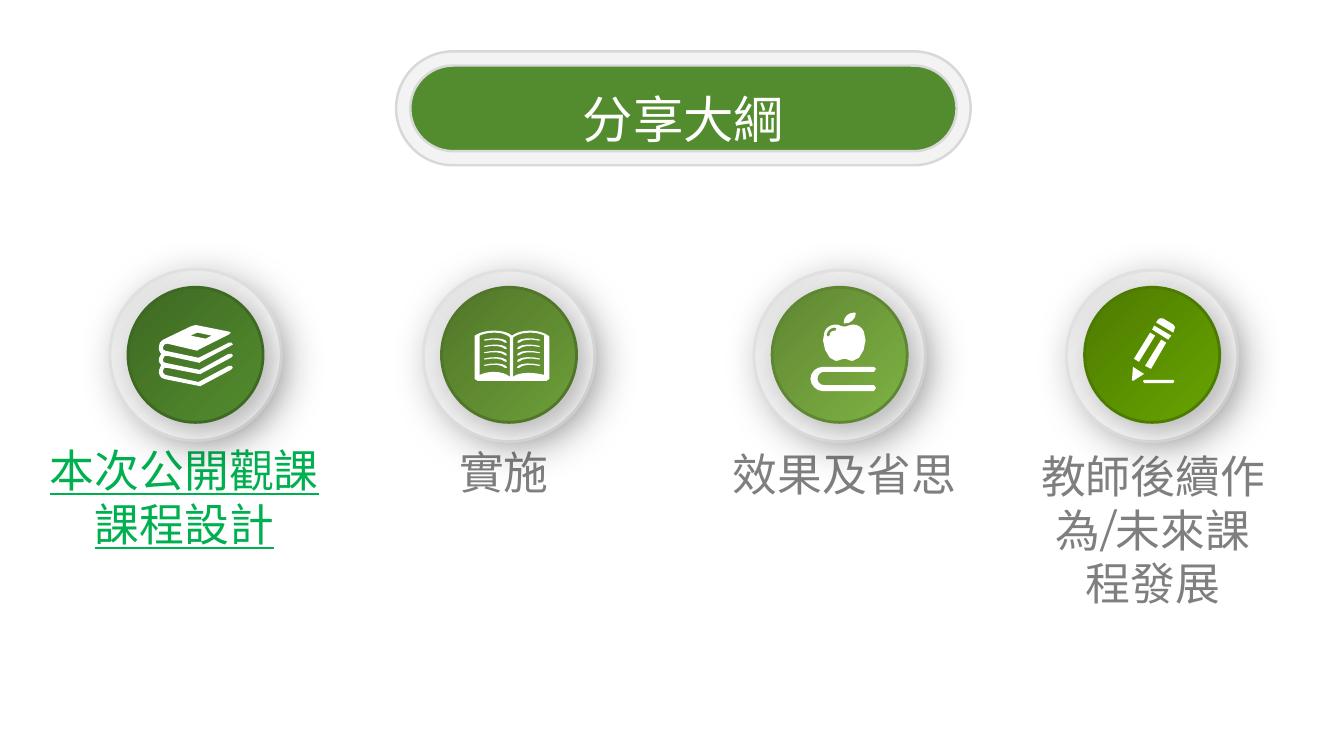
from lxml import etree
from pptx import Presentation
from pptx.dml.color import RGBColor
from pptx.enum.shapes import MSO_SHAPE
from pptx.enum.text import MSO_ANCHOR, MSO_AUTO_SIZE, PP_ALIGN
from pptx.oxml.ns import qn
from pptx.util import Pt

ROUNDED, OVAL = MSO_SHAPE.ROUNDED_RECTANGLE, MSO_SHAPE.OVAL
CENTER, TOP = PP_ALIGN.CENTER, MSO_ANCHOR.TOP
GROW, FIXED = MSO_AUTO_SIZE.SHAPE_TO_FIT_TEXT, MSO_AUTO_SIZE.NONE

FONT = "Montserrat"
COLORS = {
    "white": "FFFFFF", "pill": "F3F3F3", "pill_line": "D8D8D8", "title": "538C2E",
    "link": "00B050", "label": "7F7F7F", "ring_mid": "ECECEC", "ring_dark": "D9D9D9",
    "ring_line": "E0E0E0", "shadow": "000000",
    "design": "538C2E", "design_dark": "3E6922", "practice": "6D9E38", "practice_dark": "517629",
    "effect": "7FB344", "effect_dark": "5F8632", "future": "67A400", "future_dark": "4D7B00",
}

BOOK_STACK = [
    [(40, 49), (42, 49), (72, 33), (74, 31), (73, 29), (70, 29),
     (41, 45), (7, 38), (5, 38, 4, 36, 5, 34), (5, 32, 7, 30, 9, 31), (41, 38), (42, 37),
     (72, 21), (74, 20), (73, 18), (70, 18), (40, 33), (7, 26),
     (5, 26, 4, 24, 5, 22), (5, 20, 7, 19, 9, 19), (39, 26), (40, 25), (70, 10),
     (72, 8), (70, 7), (40, 1), (38, 0, 34, 1, 32, 2), (5, 15),
     (2, 17, 1, 19, 1, 21), (0, 24, 1, 27, 3, 29), (1, 33),
     (0, 36, 1, 38, 3, 40), (1, 45), (0, 49, 2, 53, 6, 54), (41, 61),
     (42, 61), (72, 45), (74, 43), (73, 41), (70, 41), (40, 57),
     (7, 50), (5, 49, 4, 47, 5, 45), (5, 43, 7, 42, 9, 43)],
    [(39, 8), (53, 11), (47, 14), (32, 11)],
]
OPEN_BOOK = [
    [(73, 5), (69, 2, 62, 0, 55, 0), (47, 0, 41, 2, 37, 5), (34, 2, 27, 0, 19, 0),
     (12, 0, 4, 2, 0, 5), (0, 48), (3, 50), (71, 50), (74, 48), (74, 6)],
    [(35, 7), (35, 46), (32, 43, 26, 41, 19, 41), (14, 41, 9, 42, 5, 44), (5, 5),
     (5, 5, 10, 2, 20, 2), (31, 2, 35, 7, 35, 7)],
    [(69, 5), (69, 44), (65, 43, 59, 42, 54, 42), (47, 42, 41, 43, 38, 46), (38, 7),
     (38, 7, 43, 2, 55, 2), (64, 2, 69, 5, 69, 5)],
]
PAGE_LINE = [(21, 5), (18, 2, 10, 1, 1, 3), (0, 2), (9, 0, 18, 0, 22, 3), (23, 5)]
APPLE_ON_BOOK = [
    [(65, 75), (63, 78), (12, 78), (6, 78, 0, 72, 0, 66), (0, 59, 6, 54, 12, 54), (63, 54),
     (65, 56), (63, 59), (13, 59), (10, 59, 7, 62, 7, 66), (7, 69, 10, 72, 13, 72), (63, 72)],
    [(34, 11), (40, 11, 45, 6, 45, 1), (44, 0), (38, 0, 33, 4, 33, 10)],
    [(53, 19), (51, 14, 46, 12, 43, 12), (38, 12, 37, 14, 34, 14), (30, 14, 29, 12, 25, 12),
     (21, 12, 16, 14, 14, 19), (9, 29, 17, 48, 25, 48), (29, 48, 30, 46, 34, 46),
     (37, 46, 38, 48, 42, 48), (51, 48, 58, 29, 53, 19)],
    [(25, 18), (22, 18, 19, 19, 19, 23), (17, 24), (16, 22), (17, 17, 21, 15, 24, 15), (26, 16)],
]
PENCIL = [
    [(27, 2), (28, 1, 30, 0, 32, 1), (42, 7), (44, 8, 44, 11, 43, 12), (42, 15), (25, 5)],
    [(23, 8), (21, 12), (37, 22), (40, 18)],
    [(1, 62), (2, 49), (13, 56), (2, 63)],
    [(3, 41), (19, 15), (24, 18), (8, 44)],
    [(14, 48), (30, 22), (35, 25), (20, 51)],
    [(13, 62), (42, 62), (43, 63), (42, 65), (13, 65), (12, 63)],
]

TITLE = "分享大綱"
TOPICS = [
    {"text": "本次公開觀課課程設計", "box": (20.16, 312.48, 223.2, 84.96), "link": True,
     "badge": (78.48, 192.24), "color": "design", "icon": BOOK_STACK, "icon_at": (113.04, 231.84)},
    {"text": "實施", "box": (276.48, 313.92, 167.04, 46.08), "link": False,
     "badge": (302.4, 192.96), "color": "practice", "icon": OPEN_BOOK, "icon_at": (339.12, 236.16)},
    {"text": "效果及省思", "box": (514.08, 315.36, 178.56, 46.08), "link": False,
     "badge": (538.56, 192.96), "color": "effect", "icon": APPLE_ON_BOOK, "icon_at": (578.88, 223.2)},
    {"text": "教師後續作為/未來課程發展", "box": (734.4, 316.8, 178.56, 123.84), "link": False,
     "badge": (761.76, 192.96), "color": "future", "icon": PENCIL, "icon_at": (807.84, 226.8)},
]
RING_SIZE, DISC_SIZE = 122.4, 96.48
ICON_UNIT = 0.72


def rgb(name):
    return RGBColor.from_string(COLORS[name])


def add_form(shapes, kind, box, line, width):
    shape = shapes.add_shape(kind, *(Pt(value) for value in box))
    shape.shadow.inherit = False
    shape.line.color.rgb = rgb(line)
    shape.line.width = Pt(width)
    return shape


def add_pill(shapes, box, fill):
    pill = add_form(shapes, ROUNDED, box, "pill_line", 1.75)
    pill.adjustments[0] = 0.5
    pill.fill.solid()
    pill.fill.fore_color.rgb = rgb(fill)


def add_disc(shapes, left, top, size, stops, line, shadow):
    disc = add_form(shapes, OVAL, (left, top, size, size), line, 2)
    disc.rotation = 180
    disc.fill.gradient()
    disc.fill.gradient_angle = 315
    properties = disc._element.spPr
    stop_list = properties.find(qn("a:gradFill")).find(qn("a:gsLst"))
    for stop in list(stop_list):
        stop_list.remove(stop)
    for position, color in stops:
        stop = etree.SubElement(stop_list, qn("a:gs"), pos=str(position * 1000))
        etree.SubElement(stop, qn("a:srgbClr"), val=COLORS[color])
    opacity, blur, distance = shadow
    outer = etree.SubElement(properties.find(qn("a:effectLst")), qn("a:outerShdw"),
                             blurRad=str(Pt(blur)), dist=str(Pt(distance)),
                             dir=str(45 * 60000), algn="tl", rotWithShape="0")
    color = etree.SubElement(outer, qn("a:srgbClr"), val=COLORS["shadow"])
    etree.SubElement(color, qn("a:alpha"), val=str(opacity * 1000))


def flatten(outline):
    points = [outline[0]]
    for part in outline[1:]:
        if len(part) == 2:
            points.append(part)
            continue
        controls = [points[-1], part[:2], part[2:4], part[4:]]
        span = max(abs(part[4] - points[-1][0]), abs(part[5] - points[-1][1]))
        steps = 2 if span < 6 else 4
        for step in range(1, steps + 1):
            t = step / steps
            weights = ((1 - t) ** 3, 3 * t * (1 - t) ** 2, 3 * t * t * (1 - t), t ** 3)
            points.append(tuple(sum(w * c[axis] for w, c in zip(weights, controls))
                                for axis in (0, 1)))
    return points


def add_icon(shapes, outlines, left, top, mirror_width=None):
    builder = None
    for outline in outlines:
        points = [(mirror_width - x if mirror_width else x, y) for x, y in flatten(outline)]
        points = [(Pt(left + x * ICON_UNIT), Pt(top + y * ICON_UNIT)) for x, y in points]
        if builder is None:
            builder = shapes.build_freeform(*points[0])
        else:
            builder.move_to(*points[0])
        builder.add_line_segments(points[1:], close=True)
    icon = builder.convert_to_shape()
    icon.shadow.inherit = False
    icon.fill.solid()
    icon.fill.fore_color.rgb = rgb("white")
    icon.line.fill.background()


def add_text(shapes, text, box, size, color, spacing=None, underline=None, fit=GROW):
    frame = shapes.add_textbox(*(Pt(value) for value in box)).text_frame
    frame.word_wrap = True
    frame.auto_size = fit
    frame.vertical_anchor = TOP
    paragraph = frame.paragraphs[0]
    paragraph.alignment = CENTER
    paragraph.line_spacing = spacing
    run = paragraph.add_run()
    run.text = text
    run.font.name = FONT
    run.font.size = Pt(size)
    run.font.underline = underline
    run.font.color.rgb = rgb(color)


def add_badge(shapes, topic):
    left, top = topic["badge"]
    color, dark = topic["color"], topic["color"] + "_dark"
    inset = (RING_SIZE - DISC_SIZE) / 2
    add_disc(shapes, left, top, RING_SIZE,
             [(0, "white"), (73, "ring_mid"), (100, "ring_dark")], "ring_line", (28, 28, 7))
    add_disc(shapes, left + inset, 205.2, DISC_SIZE, [(0, color), (100, dark)], dark, (25, 20, 9))
    icon_left, icon_top = topic["icon_at"]
    add_icon(shapes, topic["icon"], icon_left, icon_top)
    if topic["icon"] is OPEN_BOOK:
        for offset, mirror_width in ((6.48, None), (30.24, 23)):
            lines = [[(*part[:1], part[1] + row * 6.25) if len(part) == 2 else
                      tuple(value + row * 6.25 * (index % 2) for index, value in enumerate(part))
                      for part in PAGE_LINE] for row in range(5)]
            add_icon(shapes, lines, icon_left + offset, icon_top + 5.04, mirror_width)


def main():
    presentation = Presentation()
    presentation.slide_width, presentation.slide_height = Pt(960), Pt(540)
    slide = presentation.slides.add_slide(presentation.slide_layouts[6])
    banner = slide.shapes.add_group_shape().shapes
    add_pill(banner, (282.96, 36.72, 410.4, 81.36), "pill")
    add_pill(banner, (293.04, 46.8, 390.24, 61.2), "title")
    add_text(slide.shapes, TITLE, (330.48, 37.44, 315.36, 54), 36, "white", 1.5, fit=FIXED)
    for topic in TOPICS:
        add_text(slide.shapes, topic["text"], topic["box"], 32,
                 "link" if topic["link"] else "label", underline=topic["link"] or None)
    for topic in TOPICS:
        add_badge(slide.shapes.add_group_shape().shapes, topic)
    presentation.save("out.pptx")


if __name__ == "__main__":
    main()
